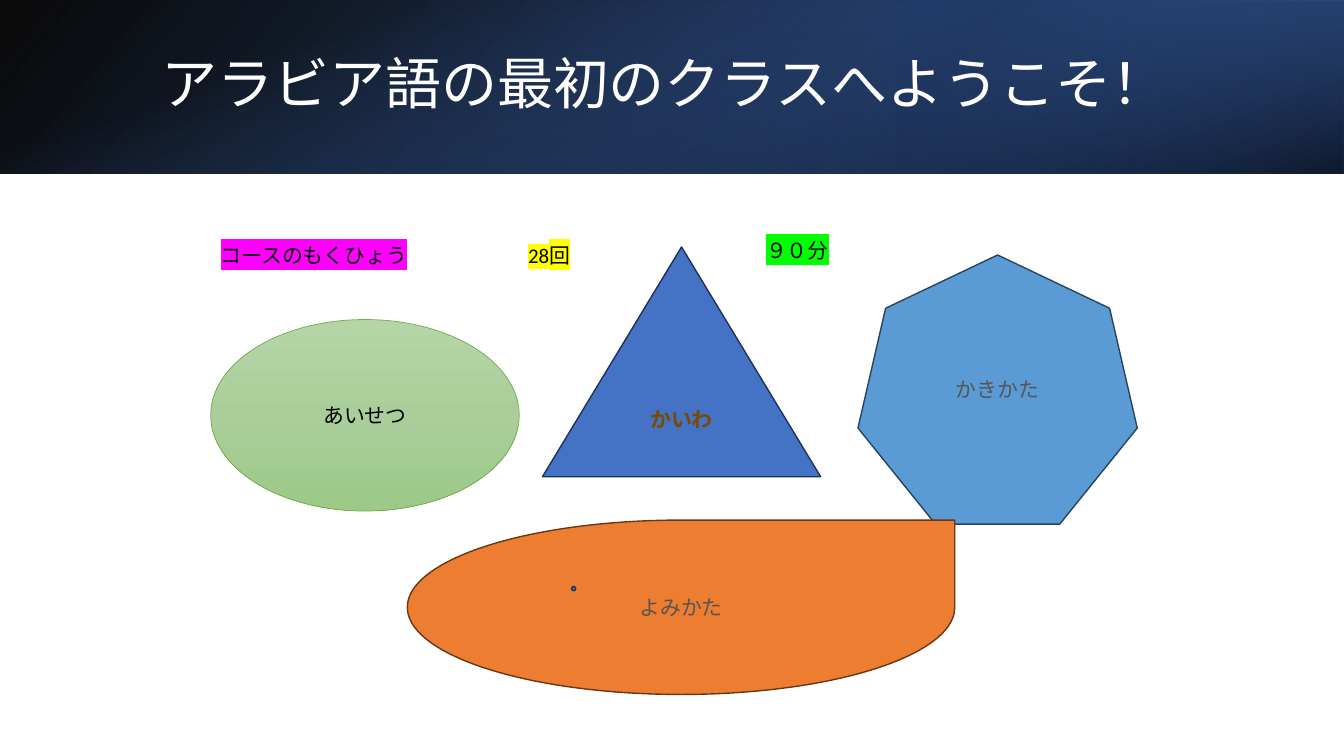
import dataclasses
import typing

import lxml.etree
import pptx
import pptx.dml.color
import pptx.enum.shapes
import pptx.enum.text
import pptx.oxml.ns
import pptx.util

Inches = pptx.util.Inches
Pt = pptx.util.Pt
qn = pptx.oxml.ns.qn
Kind = pptx.enum.shapes.MSO_SHAPE
Align = pptx.enum.text.PP_ALIGN
Anchor = pptx.enum.text.MSO_ANCHOR
Fit = pptx.enum.text.MSO_AUTO_SIZE
Box = tuple[float, float, float, float]


@dataclasses.dataclass(frozen=True)
class Theme:
    font: str = "Calibri"
    head: float = 40
    body: float = 14.9
    white: str = "FFFFFF"
    black: str = "000000"
    gray: str = "555555"
    brown: str = "7A4A05"
    blue: str = "4472C4"
    deep: str = "2F5597"
    navy: str = "203864"
    edge: str = "1E3256"
    sky: str = "5B9BD5"
    steel: str = "28445D"
    orange: str = "ED7D31"
    rust: str = "683715"
    green: str = "70AD47"
    leaf: tuple[str, ...] = ("B5D5A7", "AACE9A", "9CC987")
    pink: str = "FF00FF"
    yellow: str = "FFFF00"
    lime: str = "00FF00"


THEME = Theme()


class Stop(typing.NamedTuple):
    pos: int
    color: str
    alpha: int = 100


@dataclasses.dataclass(frozen=True)
class Blend:
    angle: int
    stops: tuple[Stop, ...]


@dataclasses.dataclass(frozen=True)
class Figure:
    kind: Kind
    box: Box
    fill: str | Blend
    line: str | None = None
    width: float = 1
    text: str = ""
    color: str = THEME.gray
    bold: bool = False
    rim: str | None = None
    turn: int = 0
    flip: bool = False


class Label(typing.NamedTuple):
    text: str
    box: Box
    mark: str


BANDS = (
    Figure(Kind.RECTANGLE, (0, 0, 13.33, 1.72), flip=True,
           fill=Blend(140, (Stop(0, THEME.black, 96), Stop(100, THEME.deep)))),
    Figure(Kind.RECTANGLE, (8.89, 0, 4.44, 1.72), turn=180, flip=True,
           fill=Blend(320, (Stop(19, THEME.navy, 68), Stop(100, THEME.blue, 79)))),
    Figure(Kind.RECTANGLE, (5.8, -5.8, 1.72, 13.33), turn=90,
           fill=Blend(340, (Stop(23, THEME.blue, 0), Stop(99, THEME.black, 74)))),
)

FIGURES = (
    Figure(Kind.OVAL, (2.09, 3.17, 3.06, 1.9), line=THEME.green, width=0.5,
           fill=Blend(90, tuple(Stop(50 * i, c) for i, c in enumerate(THEME.leaf))),
           text="あいせつ", color=THEME.black),
    Figure(Kind.ISOSCELES_TRIANGLE, (5.38, 2.45, 2.76, 2.28), THEME.blue, THEME.edge,
           text="かいわ", color=THEME.brown, bold=True, rim=THEME.orange),
    Figure(Kind.HEPTAGON, (8.51, 2.53, 2.77, 2.67), THEME.sky, THEME.steel, text="かきかた"),
    Figure(Kind.TEAR, (4.04, 5.16, 5.43, 1.73), THEME.orange, THEME.rust, text="よみかた"),
    Figure(Kind.OVAL, (5.67, 5.82, 0.04, 0.04), THEME.blue, THEME.edge),
)

LABELS = (
    Label("コースのもくひょう", (2.09, 2.36, 2.77, 0.35), THEME.pink),
    Label("28回", (5.14, 2.36, 1.55, 0.35), THEME.yellow),
    Label("９０分", (7.5, 2.31, 1.43, 0.35), THEME.lime),
)


def rgb(code: str) -> pptx.dml.color.RGBColor:
    return pptx.dml.color.RGBColor.from_string(code)


def tint(node, code: str):
    """Add an RGB colour under node and return it."""
    return lxml.etree.SubElement(node, qn("a:srgbClr"), val=code)


def blend(shape, mix: Blend) -> None:
    """Fill the shape with a linear gradient whose stops may be transparent."""
    grad = lxml.etree.Element(qn("a:gradFill"), rotWithShape="1")
    stops = lxml.etree.SubElement(grad, qn("a:gsLst"))
    for stop in mix.stops:
        node = lxml.etree.SubElement(stops, qn("a:gs"), pos=str(stop.pos * 1000))
        color = tint(node, stop.color)
        if stop.alpha < 100:
            lxml.etree.SubElement(color, qn("a:alpha"), val=str(stop.alpha * 1000))
    lxml.etree.SubElement(grad, qn("a:lin"), ang=str(mix.angle * 60000), scaled="0")
    shape.element.spPr.find(qn("a:prstGeom")).addnext(grad)


def write(shape, text: str, *, size: float = THEME.body, color: str = THEME.black,
          bold: bool = False, align: Align = Align.LEFT, anchor: Anchor = Anchor.TOP,
          fit: Fit = Fit.NONE, after: float = 6, lead: float = 1,
          mark: str | None = None, rim: str | None = None) -> None:
    frame = shape.text_frame
    frame.word_wrap = True
    frame.auto_size = fit
    frame.vertical_anchor = anchor
    para = frame.paragraphs[0]
    para.alignment = align
    para.space_after = Pt(after)
    para.line_spacing = lead
    run = para.add_run()
    run.text = text
    font = run.font
    font.name, font.size, font.bold = THEME.font, Pt(size), bold
    font.color.rgb = rgb(color)
    fill = run._r.rPr.find(qn("a:solidFill"))
    if mark:
        node = lxml.etree.Element(qn("a:highlight"))
        tint(node, mark)
        fill.addnext(node)
    if rim:
        node = lxml.etree.Element(qn("a:ln"), w=str(Pt(1.75)))
        tint(lxml.etree.SubElement(node, qn("a:solidFill")), rim)
        fill.addprevious(node)


def draw(slide, item: Figure) -> None:
    shape = slide.shapes.add_shape(item.kind, *map(Inches, item.box))
    shape.shadow.inherit = False
    shape.rotation = item.turn
    if item.flip:
        shape.element.spPr.find(qn("a:xfrm")).set("flipH", "1")
    if isinstance(item.fill, Blend):
        blend(shape, item.fill)
    else:
        shape.fill.solid()
        shape.fill.fore_color.rgb = rgb(item.fill)
    if item.line:
        shape.line.color.rgb = rgb(item.line)
        shape.line.width = Pt(item.width)
    else:
        shape.line.fill.background()
    if item.text:
        write(shape, item.text, color=item.color, bold=item.bold, rim=item.rim,
              align=Align.CENTER, anchor=Anchor.MIDDLE)


def head(slide, text: str, box: Box) -> None:
    """Format the title and bring it in front of the bands."""
    title = slide.shapes.title
    title.left, title.top, title.width, title.height = map(Inches, box)
    write(title, text, size=THEME.head, color=THEME.white,
          anchor=Anchor.MIDDLE, after=0, lead=0.9)
    title.element.getparent().append(title.element)


def main() -> None:
    deck = pptx.Presentation()
    deck.slide_width, deck.slide_height = Inches(13.33), Inches(7.5)
    slide = deck.slides.add_slide(deck.slide_layouts.get_by_name("Title Only"))
    for band in BANDS:
        draw(slide, band)
    head(slide, "アラビア語の最初のクラスへようこそ！", (1.5, 0.38, 10.98, 0.96))
    for item in FIGURES:
        draw(slide, item)
    for label in LABELS:
        box = slide.shapes.add_textbox(*map(Inches, label.box))
        write(box, label.text, mark=label.mark, fit=Fit.SHAPE_TO_FIT_TEXT)
    deck.save("out.pptx")


if __name__ == "__main__":
    main()
